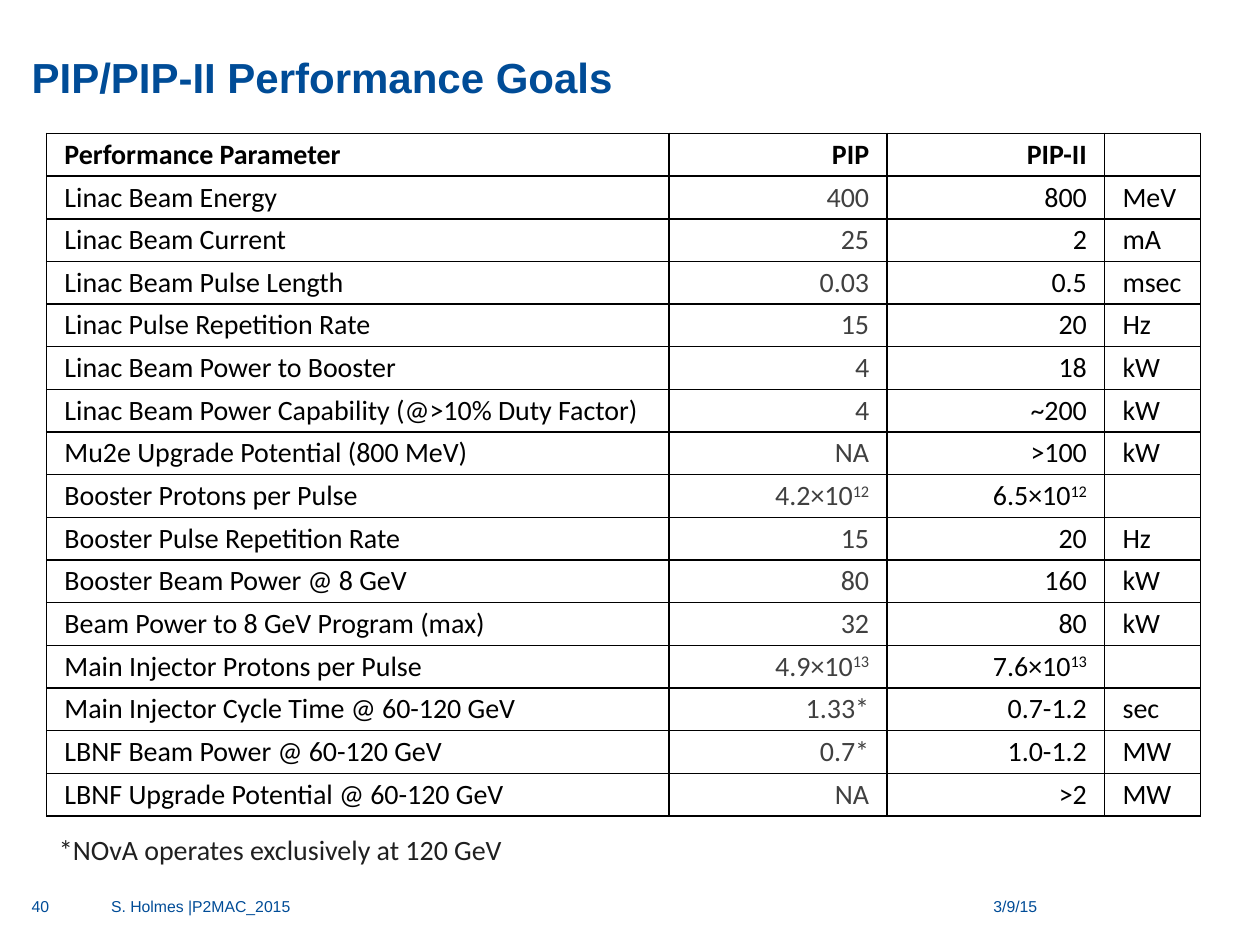
"""Build the slide of PIP and PIP-II performance goals."""
import pptx
import pptx.dml.color
import pptx.enum.text
import pptx.oxml
import pptx.oxml.ns
import pptx.util

Cm = pptx.util.Cm
Pt = pptx.util.Pt
RGBColor = pptx.dml.color.RGBColor
Align = pptx.enum.text.PP_ALIGN
Anchor = pptx.enum.text.MSO_ANCHOR

BLUE = RGBColor(0x00, 0x4C, 0x97)
BLACK = RGBColor(0x00, 0x00, 0x00)
GRAY = RGBColor(0x40, 0x40, 0x40)
DARK = RGBColor(0x20, 0x20, 0x20)

WIDTHS = (12.55, 4.39, 4.39, 1.93)
HEIGHT = 0.86
ALIGNS = (Align.LEFT, Align.RIGHT, Align.RIGHT, Align.LEFT)
COLORS = (BLACK, GRAY, BLACK, BLACK)
GOALS = (
    ("Performance Parameter", "PIP", "PIP-II", ""),
    ("Linac Beam Energy", "400", "800", "MeV"),
    ("Linac Beam Current", "25", "2", "mA"),
    ("Linac Beam Pulse Length", "0.03", "0.5", "msec"),
    ("Linac Pulse Repetition Rate", "15", "20", "Hz"),
    ("Linac Beam Power to Booster", "4", "18", "kW"),
    ("Linac Beam Power Capability (@>10% Duty Factor)", "4", "~200", "kW"),
    ("Mu2e Upgrade Potential (800 MeV)", "NA", ">100", "kW"),
    ("Booster Protons per Pulse", "4.2×10^12", "6.5×10^12", ""),
    ("Booster Pulse Repetition Rate", "15", "20", "Hz"),
    ("Booster Beam Power @ 8 GeV", "80", "160", "kW"),
    ("Beam Power to 8 GeV Program (max)", "32", "80", "kW"),
    ("Main Injector Protons per Pulse", "4.9×10^13", "7.6×10^13", ""),
    ("Main Injector Cycle Time @ 60-120 GeV", "1.33*", "0.7-1.2", "sec"),
    ("LBNF Beam Power @ 60-120 GeV", "0.7*", "1.0-1.2", "MW"),
    ("LBNF Upgrade Potential @ 60-120 GeV", "NA", ">2", "MW"),
)


def style(para, face, size, color, bold=False):
    for run in para.runs:
        run.font.name = face
        run.font.size = Pt(size)
        run.font.bold = bold
        run.font.color.rgb = color


def add_text(slide, text, box, face, size, color, bold=False,
             align=Align.LEFT, anchor=Anchor.TOP, inset=(0, 0)):
    frame = slide.shapes.add_textbox(*map(Cm, box)).text_frame
    frame.word_wrap = True
    frame.vertical_anchor = anchor
    frame.margin_left = frame.margin_right = Cm(inset[0])
    frame.margin_top = frame.margin_bottom = Cm(inset[1])
    frame.text = text
    para = frame.paragraphs[0]
    para.alignment = align
    style(para, face, size, color, bold)


def add_lines(cell, row):
    widths = {"L": 1, "R": 1, "T": 1.5 if row == 1 else 1, "B": 1.5 if row == 0 else 1}
    props = cell._tc.get_or_add_tcPr()
    for spot, (side, width) in enumerate(widths.items()):
        props.insert(spot, pptx.oxml.parse_xml(
            f'<a:ln{side} {pptx.oxml.ns.nsdecls("a")} w="{Pt(width)}">'
            f'<a:solidFill><a:srgbClr val="{BLACK}"/></a:solidFill></a:ln{side}>'))


def fill_cell(cell, text, row, col):
    cell.fill.background()
    cell.vertical_anchor = Anchor.MIDDLE
    cell.margin_left = cell.margin_right = Cm(0.36)
    cell.margin_top = cell.margin_bottom = 0
    add_lines(cell, row)
    base, _, power = text.partition("^")
    para = cell.text_frame.paragraphs[0]
    para.text = base
    para.alignment = ALIGNS[col]
    if power:
        run = para.add_run()
        run.text = power
        run.font._element.set("baseline", "30000")
    style(para, "Calibri", 16, COLORS[col] if row else BLACK, row == 0)


def add_goals(slide):
    size = (sum(WIDTHS), HEIGHT * len(GOALS))
    table = slide.shapes.add_table(
        len(GOALS), len(WIDTHS), Cm(0.94), Cm(2.69), *map(Cm, size)).table
    table.horz_banding = False
    for col, width in zip(table.columns, WIDTHS):
        col.width = Cm(width)
    for row, goal in enumerate(GOALS):
        table.rows[row].height = Cm(HEIGHT)
        for col, text in enumerate(goal):
            fill_cell(table.cell(row, col), text, row, col)


def add_foot(slide):
    items = (
        ("S. Holmes |P2MAC_2015", 2.24, 14.94, Align.LEFT),
        ("40", 0.64, 1.24, Align.LEFT),
        ("3/9/15", 17.91, 3, Align.RIGHT),
    )
    for text, left, width, align in items:
        add_text(slide, text, (left, 18.08, width, 0.66), "Arial", 9, BLUE, align=align)


def main():
    deck = pptx.Presentation()
    deck.slide_width, deck.slide_height = Cm(25.4), Cm(19.05)
    slide = deck.slides.add_slide(deck.slide_layouts[6])
    add_text(slide, "PIP/PIP-II Performance Goals", (0.64, 0.28, 24.13, 1.78),
             "Arial", 24, BLUE, bold=True, anchor=Anchor.BOTTOM)
    add_goals(slide)
    add_foot(slide)
    add_text(slide, "*NOvA operates exclusively at 120 GeV", (0.94, 16.66, 12.75, 0.94),
             "Calibri", 16, DARK, inset=(0.25, 0.13))
    deck.save("out.pptx")


if __name__ == "__main__":
    main()
